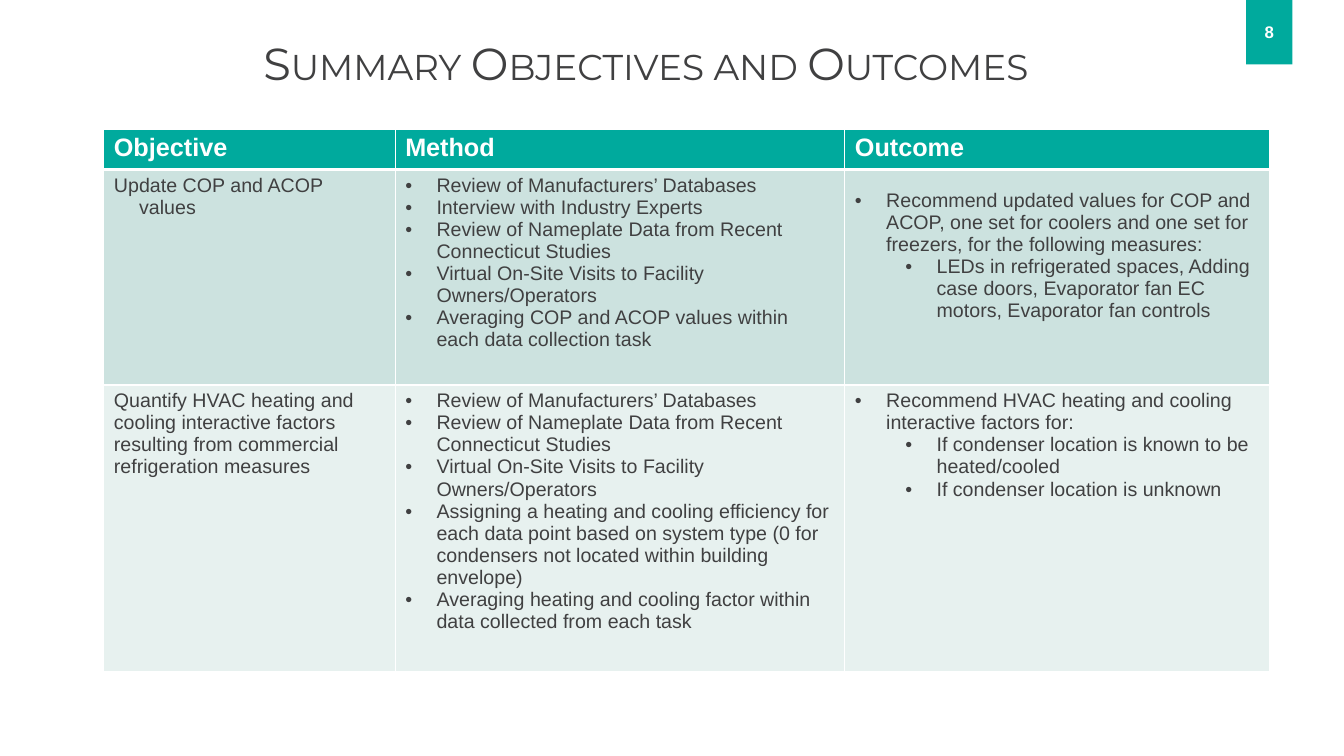
from pptx import Presentation
from pptx.dml.color import RGBColor
from pptx.enum.shapes import MSO_SHAPE as Shape
from pptx.enum.text import MSO_ANCHOR as Anchor, PP_ALIGN as Align
from pptx.oxml.ns import qn
from pptx.util import Inches, Pt
from lxml.etree import SubElement as Sub

TEAL = RGBColor(0x00, 0xAA, 0x9D)
DARK = RGBColor(0x40, 0x40, 0x41)
WHITE = RGBColor(0xFF, 0xFF, 0xFF)
MIST = RGBColor(0xCC, 0xE2, 0xDF)
PALE = RGBColor(0xE7, 0xF1, 0xEF)

PLAIN, HANG, DOT, SUBDOT = "plain", "hang", "dot", "subdot"
STYLES = {
    PLAIN: (0, 0, 0, ""),
    HANG: (0, 0.25, -0.25, ""),
    DOT: (0, 0.31, -0.31, "•"),
    SUBDOT: (1, 0.81, -0.31, "•"),
}

WIDTHS = (2.89, 4.46, 4.21)
HEIGHTS = (0.39, 2.14, 2.84)
HEADS = ("Objective", "Method", "Outcome")
REVIEW = (DOT, "Review of Manufacturers’ Databases")
PLATES = (DOT, "Review of Nameplate Data from Recent Connecticut Studies")
VISITS = (DOT, "Virtual On-Site Visits to Facility Owners/Operators")
ROWS = [
    [
        [(HANG, "Update COP and ACOP values")],
        [
            REVIEW,
            (DOT, "Interview with Industry Experts"),
            PLATES,
            VISITS,
            (DOT, "Averaging COP and ACOP values within each data collection task"),
        ],
        [
            (DOT, "Recommend updated values for COP and ACOP, one set for coolers "
                  "and one set for freezers, for the following measures:"),
            (SUBDOT, "LEDs in refrigerated spaces, Adding case doors, "
                     "Evaporator fan EC motors, Evaporator fan controls"),
        ],
    ],
    [
        [(PLAIN, "Quantify HVAC heating and cooling interactive factors "
                 "resulting from commercial refrigeration measures")],
        [
            REVIEW,
            PLATES,
            VISITS,
            (DOT, "Assigning a heating and cooling efficiency for each data point based on "
                  "system type (0 for condensers not located within building envelope)"),
            (DOT, "Averaging heating and cooling factor within data collected from each task"),
        ],
        [
            (DOT, "Recommend HVAC heating and cooling interactive factors for:"),
            (SUBDOT, "If condenser location is known to be heated/cooled"),
            (SUBDOT, "If condenser location is unknown"),
        ],
    ],
]


def write(frame, lines, size=14, color=DARK, face="Arial", bold=False,
          align=Align.LEFT, space=1.0, caps=False):
    """Fill a text frame with styled lines."""
    frame.word_wrap = True
    for i, (style, text) in enumerate(lines):
        para = frame.add_paragraph() if i else frame.paragraphs[0]
        level, left, first, mark = STYLES[style]
        props = para._p.get_or_add_pPr()
        props.set("marL", str(Inches(left)))
        props.set("indent", str(Inches(first)))
        para.level, para.alignment, para.line_spacing = level, align, space
        if mark:
            Sub(props, qn("a:buFont"), typeface="Arial")
            Sub(props, qn("a:buChar"), char=mark)
        run = para.add_run()
        run.text = text
        font = run.font
        font.size, font.name, font.bold = Pt(size), face, bold
        font.color.rgb = color
        if caps:
            font._element.set("cap", "small")


def paint(cell, fill, top=1, low=1):
    """Give a cell white borders and a solid fill."""
    props = cell._tc.get_or_add_tcPr()
    for side, width in zip("LRTB", (1, 1, top, low)):
        line = Sub(props, qn(f"a:ln{side}"), w=str(Pt(width)))
        Sub(Sub(line, qn("a:solidFill")), qn("a:srgbClr"), val=str(WHITE))
    cell.fill.solid()
    cell.fill.fore_color.rgb = fill


def title(slide, box):
    """Place the heading in the given box."""
    frame = slide.shapes.add_textbox(*map(Inches, box)).text_frame
    frame.vertical_anchor = Anchor.BOTTOM
    write(frame, [(PLAIN, "Summary Objectives and Outcomes")], size=32,
          face="Montserrat", align=Align.CENTER, space=0.9, caps=True)


def grid(slide, left, top):
    """Place the objectives table with its corner at left, top."""
    box = (left, top, sum(WIDTHS), sum(HEIGHTS))
    table = slide.shapes.add_table(
        len(HEIGHTS), len(WIDTHS), *map(Inches, box)).table
    for col, width in zip(table.columns, WIDTHS):
        col.width = Inches(width)
    for row, height in zip(table.rows, HEIGHTS):
        row.height = Inches(height)
    for c, head in enumerate(HEADS):
        cell = table.cell(0, c)
        paint(cell, TEAL, low=3)
        write(cell.text_frame, [(PLAIN, head)], size=18, color=WHITE, bold=True)
    for r, (row, fill) in enumerate(zip(ROWS, (MIST, PALE)), 1):
        for c, lines in enumerate(row):
            cell = table.cell(r, c)
            paint(cell, fill, top=3 if r == 1 else 1)
            write(cell.text_frame, lines)
    values = table.cell(1, 2)
    values.vertical_anchor = Anchor.MIDDLE
    values.margin_bottom = Inches(0.48)


def badge(slide, box):
    """Place the page number tab in the given box."""
    tab = slide.shapes.add_shape(Shape.RECTANGLE, *map(Inches, box))
    tab.shadow.inherit = False
    tab.fill.solid()
    tab.fill.fore_color.rgb = TEAL
    tab.line.fill.background()
    tab.text_frame.vertical_anchor = Anchor.MIDDLE
    write(tab.text_frame, [(PLAIN, "8")], size=12, color=WHITE, bold=True,
          align=Align.CENTER)


def main():
    """Build and save the slide."""
    deck = Presentation()
    deck.slide_width, deck.slide_height = Inches(13.33), Inches(7.5)
    slide = deck.slides.add_slide(deck.slide_layouts[6])
    title(slide, (0.39, 0.33, 12.03, 0.61))
    grid(slide, 1.03, 1.28)
    badge(slide, (12.36, -0.01, 0.46, 0.65))
    deck.save("out.pptx")


if __name__ == "__main__":
    main()
